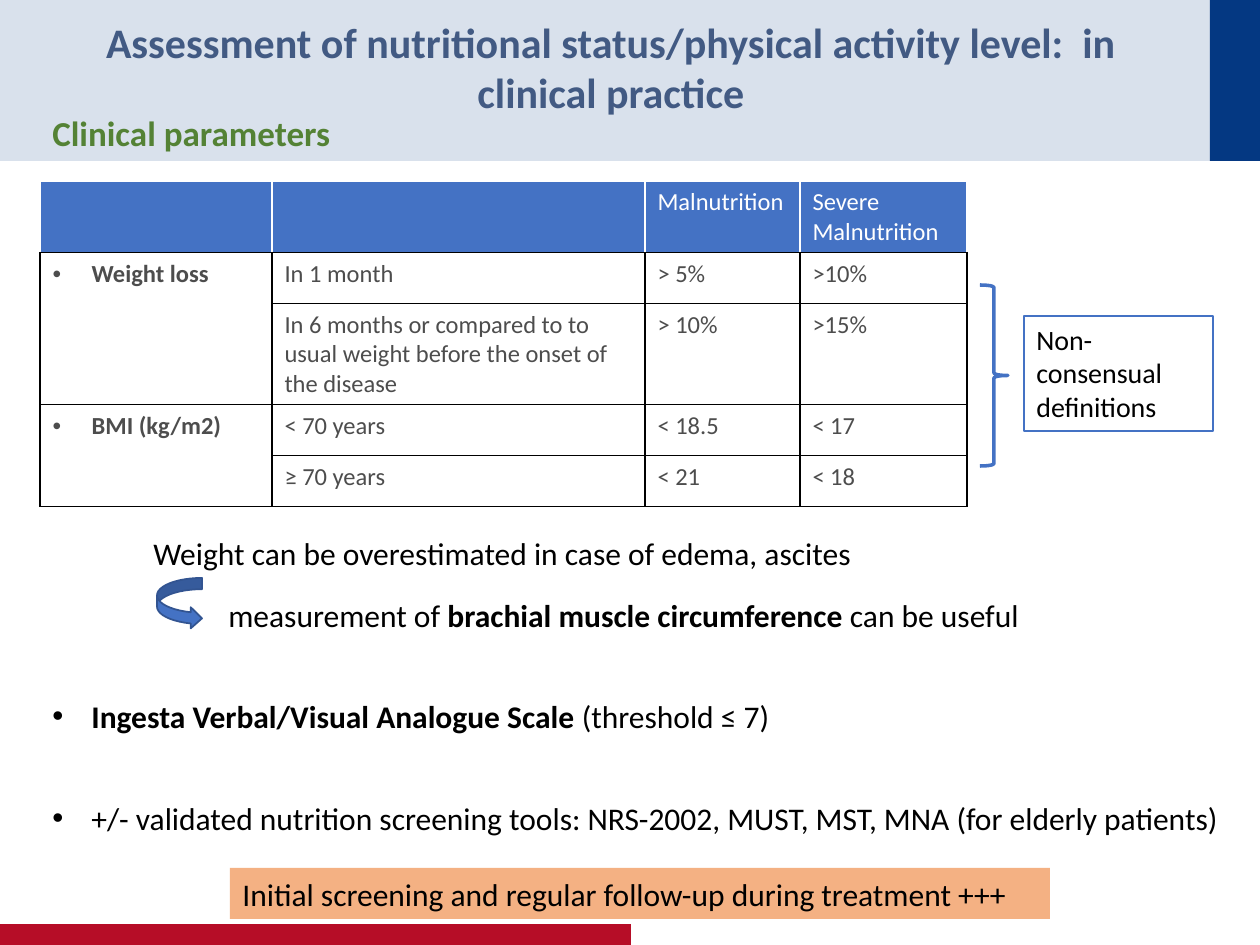
from dataclasses import dataclass

from lxml import etree
from pptx import Presentation
from pptx.dml.color import RGBColor
from pptx.enum.shapes import MSO_SHAPE
from pptx.enum.text import MSO_ANCHOR, PP_ALIGN
from pptx.oxml.ns import qn
from pptx.util import Pt

RECT = MSO_SHAPE.RECTANGLE
BRACE = MSO_SHAPE.RIGHT_BRACE
CURVED_ARROW = MSO_SHAPE.CURVED_RIGHT_ARROW
LEFT, CENTER = PP_ALIGN.LEFT, PP_ALIGN.CENTER
TOP, MIDDLE = MSO_ANCHOR.TOP, MSO_ANCHOR.MIDDLE
PX = 914400 / 126  # EMU in one px
BULLET_INDENT = 39


@dataclass(frozen=True)
class Theme:
    font: str = "Calibri"
    navy: str = "043882"
    red: str = "B60D27"
    title: str = "425A83"
    green: str = "548235"
    blue: str = "4472C4"
    dark_blue: str = "325491"
    orange: str = "F4B183"
    grey: str = "4D4D4D"
    black: str = "000000"
    white: str = "FFFFFF"
    title_size: int = 24
    heading_size: int = 20
    body_size: int = 18
    note_size: int = 16
    table_size: int = 14


T = Theme()

COLUMNS = [232, 373, 155, 167]
ROWS = [71, 51, 101, 51, 51]
HEADER = ["", "", "Malnutrition", "Severe Malnutrition"]
# Each parameter with its criteria: case, malnutrition, severe malnutrition
PARAMETERS = [
    ("Weight loss", [
        ("In 1 month", "> 5%", ">10%"),
        ("In 6 months or compared to to usual weight before the onset of the disease",
         "> 10%", ">15%"),
    ]),
    ("BMI (kg/m2)", [
        ("< 70 years", "< 18.5", "< 17"),
        ("≥ 70 years", "< 21", "< 18"),
    ]),
]


def px(n):
    return round(n * PX)


def rgb(color):
    return RGBColor.from_string(color)


def write_text(tf, *runs, size=T.body_size, color=T.black, align=LEFT,
               anchor=TOP, bullet=False, wrap=True):
    """Fill a text frame with one paragraph of (text, bold) runs."""
    tf.word_wrap = wrap
    tf.vertical_anchor = anchor
    p = tf.paragraphs[0]
    p.alignment = align
    for text, bold in runs:
        r = p.add_run()
        r.text = text
        r.font.name = T.font
        r.font.size = Pt(size)
        r.font.bold = bold
        r.font.color.rgb = rgb(color)
    if bullet:
        pPr = p._p.get_or_add_pPr()
        pPr.set("marL", str(px(BULLET_INDENT)))
        pPr.set("indent", str(-px(BULLET_INDENT)))
        etree.SubElement(pPr, qn("a:buFont"), typeface="Arial")
        etree.SubElement(pPr, qn("a:buChar"), char="•")


def add_text(s, x, y, w, h, *runs, **fmt):
    tb = s.shapes.add_textbox(px(x), px(y), px(w), px(h))
    write_text(tb.text_frame, *runs, **fmt)


def add_box(s, kind, x, y, w, h, fill=None, line=None, width=1, alpha=None):
    sp = s.shapes.add_shape(kind, px(x), px(y), px(w), px(h))
    sp.shadow.inherit = False
    if fill:
        sp.fill.solid()
        sp.fill.fore_color.rgb = rgb(fill)
        if alpha:
            clr = sp._element.spPr.find(qn("a:solidFill"))[0]
            etree.SubElement(clr, qn("a:alpha"), val=str(alpha * 1000))
    else:
        sp.fill.background()
    if line:
        sp.line.color.rgb = rgb(line)
        sp.line.width = Pt(width)
    else:
        sp.line.fill.background()
    return sp


def set_borders(cell, sides, bottom):
    tcPr = cell._tc.get_or_add_tcPr()
    for side, color in zip("LRTB", [sides] * 3 + [bottom]):
        ln = etree.SubElement(tcPr, qn(f"a:ln{side}"), w=str(Pt(1)))
        fill = etree.SubElement(ln, qn("a:solidFill"))
        etree.SubElement(fill, qn("a:srgbClr"), val=color)


def add_parameter_table(s, x, y):
    table = s.shapes.add_table(len(ROWS), len(COLUMNS), px(x), px(y),
                               px(sum(COLUMNS)), px(sum(ROWS))).table
    table.first_row = table.horz_banding = False
    for col, w in zip(table.columns, COLUMNS):
        col.width = px(w)
    for row, h in zip(table.rows, ROWS):
        row.height = px(h)

    lines = [HEADER]
    for name, criteria in PARAMETERS:
        first = len(lines)
        lines += [(name if i == 0 else "", *c) for i, c in enumerate(criteria)]
        table.cell(first, 0).merge(table.cell(len(lines) - 1, 0))

    for i, line in enumerate(lines):
        header = i == 0
        for j, text in enumerate(line):
            cell = table.cell(i, j)
            set_borders(cell, T.white if header else T.black, T.black)
            if header:
                cell.fill.solid()
                cell.fill.fore_color.rgb = rgb(T.blue)
            else:
                cell.fill.background()
            if text:
                name = j == 0
                write_text(cell.text_frame, (text, name), size=T.table_size,
                           color=T.white if header else T.grey, bullet=name)


def add_frame(s):
    add_box(s, RECT, 0, 0, 1260, 161, fill=T.navy, alpha=15)
    add_box(s, RECT, 1210, 0, 50, 161, fill=T.navy)
    add_box(s, RECT, 0, 924, 631, 21, fill=T.red)


def main():
    prs = Presentation()
    prs.slide_width, prs.slide_height = px(1260), px(945)
    s = prs.slides.add_slide(prs.slide_layouts[6])

    # Header band and titles
    add_frame(s)
    add_text(s, 44, 10, 1134, 115,
             ("Assessment of nutritional status/physical activity level:  in clinical practice", True),
             size=T.title_size, color=T.title, align=CENTER)
    add_text(s, 40, 105, 1114, 55, ("Clinical parameters", True),
             size=T.heading_size, color=T.green)

    # Thresholds and their caveat
    add_parameter_table(s, 40, 181)
    add_box(s, BRACE, 980, 285, 28, 181, line=T.blue, width=2)
    note = add_box(s, RECT, 1024, 316, 189, 115, line=T.blue, width=0.75)
    write_text(note.text_frame, ("Non-consensual definitions", False), size=T.note_size)

    # Edema remark
    add_text(s, 141, 528, 978, 50,
             ("Weight can be overestimated in case of edema, ascites", False))
    arrow = add_box(s, CURVED_ARROW, 157, 578, 45, 51, fill=T.blue, line=T.dark_blue)
    arrow.adjustments[1] = 0.47
    add_text(s, 216, 590, 1145, 50, ("measurement of ", False),
             ("brachial muscle circumference ", True), ("can be useful", False))

    # Other tools
    add_text(s, 40, 691, 1055, 50, ("Ingesta Verbal/Visual Analogue Scale ", True),
             ("(threshold ≤ 7)", False), bullet=True)
    add_text(s, 40, 793, 1220, 50,
             ("+/- validated nutrition screening tools: NRS-2002, MUST, MST, MNA (for elderly patients)", False),
             bullet=True, wrap=False)

    # Conclusion
    banner = add_box(s, RECT, 230, 868, 820, 51, fill=T.orange)
    write_text(banner.text_frame,
               ("Initial screening and regular follow-up during treatment +++", False),
               anchor=MIDDLE)

    prs.save("out.pptx")


if __name__ == "__main__":
    main()
